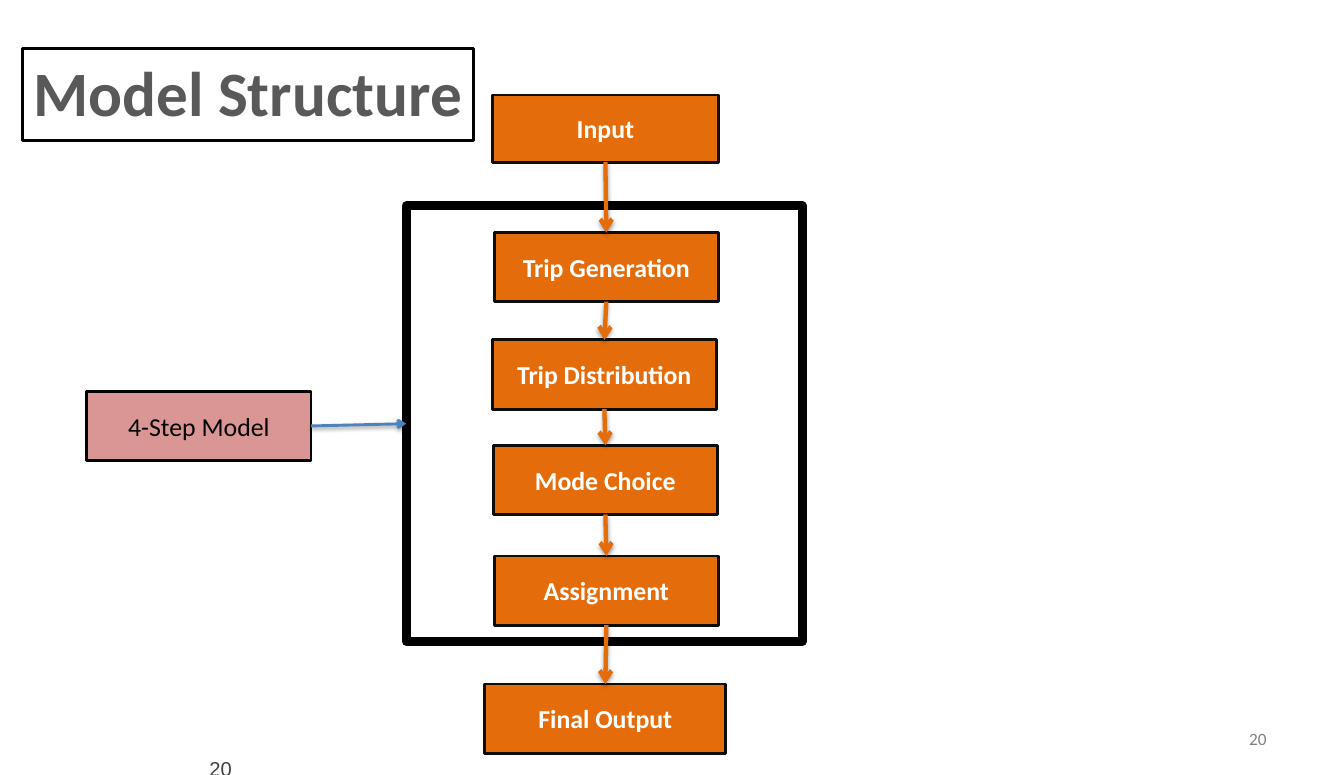
from lxml import etree
from pptx import Presentation
from pptx.dml.color import RGBColor
from pptx.enum.shapes import MSO_CONNECTOR, MSO_SHAPE
from pptx.enum.text import MSO_ANCHOR, PP_ALIGN
from pptx.oxml.ns import qn
from pptx.util import Pt

RECT = MSO_SHAPE.RECTANGLE
STRAIGHT = MSO_CONNECTOR.STRAIGHT
TOP, MIDDLE = MSO_ANCHOR.TOP, MSO_ANCHOR.MIDDLE
CENTER, RIGHT = PP_ALIGN.CENTER, PP_ALIGN.RIGHT
TOP_SITE, LEFT_SITE, BOTTOM_SITE, RIGHT_SITE = range(4)

WHITE = RGBColor(0xFF, 0xFF, 0xFF)
BLACK = RGBColor(0x00, 0x00, 0x00)
NEAR_BLACK = RGBColor(0x0D, 0x0D, 0x0D)
DARK_GRAY = RGBColor(0x40, 0x40, 0x40)
TITLE_GRAY = RGBColor(0x59, 0x59, 0x59)
MID_GRAY = RGBColor(0x80, 0x80, 0x80)
ORANGE = RGBColor(0xE4, 0x6C, 0x0A)
PINK = RGBColor(0xD9, 0x96, 0x94)
BLUE = RGBColor(0x4F, 0x81, 0xBD)

STEPS = [
    ("Input", 59.8, 0.2, 157.7, 46.8),
    ("Trip Generation", 61.2, 96, 156.2, 48.2),
    ("Trip Distribution", 59.8, 170.9, 156.2, 48.2),
    ("Mode Choice", 60.5, 244.3, 156.2, 48.2),
    ("Assignment", 61.2, 321.4, 156.2, 48.2),
    ("Final Output", 54.7, 410.6, 167.8, 48.2),
]


def set_text(sp, text, size=18, color=WHITE, bold=False, font="Calibri",
             align=CENTER, anchor=MIDDLE, wrap=True):
    tf = sp.text_frame
    tf.word_wrap = wrap
    tf.vertical_anchor = anchor
    p = tf.paragraphs[0]
    p.alignment = align
    r = p.add_run()
    r.text = text
    r.font.name = font
    r.font.size = Pt(size)
    r.font.bold = bold
    r.font.color.rgb = color


def add_box(s, left, top, width, height, fill=None, line=BLACK, weight=2):
    sp = s.shapes.add_shape(RECT, Pt(left), Pt(top), Pt(width), Pt(height))
    sp.shadow.inherit = False
    if fill is None:
        sp.fill.background()
    else:
        sp.fill.solid()
        sp.fill.fore_color.rgb = fill
    sp.line.color.rgb = line
    sp.line.width = Pt(weight)
    return sp


def add_arrow(s, start, start_site, end, end_site, color, weight):
    cxn = s.shapes.add_connector(STRAIGHT, 0, 0, 0, 0)
    cxn.begin_connect(start, start_site)
    cxn.end_connect(end, end_site)
    cxn.line.color.rgb = color
    cxn.line.width = Pt(weight)
    etree.SubElement(cxn.line._get_or_add_ln(), qn("a:tailEnd"), type="arrow")
    effects = etree.SubElement(cxn._element.spPr, qn("a:effectLst"))
    shadow = etree.SubElement(effects, qn("a:outerShdw"), blurRad=str(Pt(3.1)),
                              dist=str(Pt(1.6)), dir="5400000", rotWithShape="0")
    shade = etree.SubElement(shadow, qn("a:srgbClr"), val=str(BLACK))
    etree.SubElement(shade, qn("a:alpha"), val="38000")


def add_title(s, left, top, width, height):
    sp = add_box(s, left, top, width, height, fill=WHITE)
    set_text(sp, "Model Structure", size=44, color=TITLE_GRAY, bold=True,
             anchor=TOP, wrap=False)


def add_page_number(s, left, top, width, height, **text_format):
    sp = s.shapes.add_textbox(Pt(left), Pt(top), Pt(width), Pt(height))
    set_text(sp, "20", align=RIGHT, **text_format)


def add_flow(s, left, top):
    steps = []
    for name, dx, dy, width, height in STEPS:
        sp = add_box(s, left + dx, top + dy, width, height, fill=ORANGE, line=NEAR_BLACK)
        set_text(sp, name, bold=True)
        steps.append(sp)
    frame = add_box(s, left, top + 77.3, 275.8, 303.8, weight=6)
    for start, end in zip(steps, steps[1:]):
        add_arrow(s, start, BOTTOM_SITE, end, TOP_SITE, ORANGE, 3)
    return frame


def add_model_label(s, left, top, width, height, frame):
    sp = add_box(s, left, top, width, height, fill=PINK)
    set_text(sp, "4-Step Model", color=BLACK)
    add_arrow(s, sp, RIGHT_SITE, frame, LEFT_SITE, BLUE, 2)


def main():
    prs = Presentation()
    prs.slide_width, prs.slide_height = Pt(936), Pt(540)
    s = prs.slides.add_slide(prs.slide_layouts[6])
    add_page_number(s, 671, 500.4, 218.2, 28.8, size=12, color=MID_GRAY)
    add_title(s, 15.8, 33.8, 313.9, 64.1)
    add_page_number(s, 6.5, 523.4, 162, 10.8, size=14, color=DARK_GRAY,
                    font="Arial", anchor=TOP)
    frame = add_flow(s, 283, 66)
    add_model_label(s, 60.5, 272.7, 156.2, 48.2, frame)
    prs.save("out.pptx")


if __name__ == "__main__":
    main()
